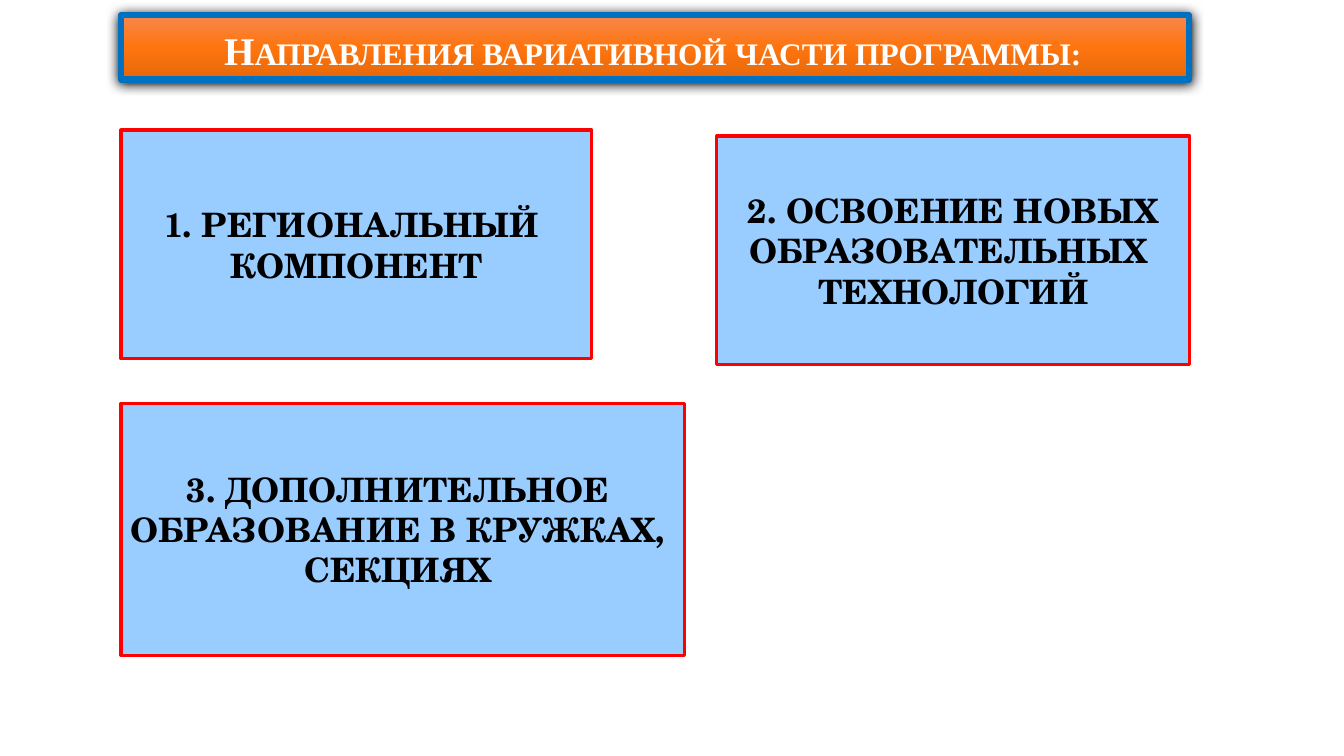
import pptx
import pptx.util
import pptx.dml.color
import pptx.enum.shapes
import pptx.enum.text
import pptx.oxml
import pptx.oxml.ns
from lxml import etree

Inches, Pt = pptx.util.Inches, pptx.util.Pt
RGB = pptx.dml.color.RGBColor.from_string
RECTANGLE = pptx.enum.shapes.MSO_SHAPE.RECTANGLE
CENTER = pptx.enum.text.PP_ALIGN.CENTER
ANCHOR = pptx.enum.text.MSO_ANCHOR
qn = pptx.oxml.ns.qn

# Content
HEADING = "Направления вариативной части программы:"
DIRECTIONS = [
    # left, top, width, height, lines
    (1.2, 1.29, 4.67, 2.27, ["1. РЕГИОНАЛЬНЫЙ ", "КОМПОНЕНТ"]),
    (7.11, 1.35, 4.69, 2.27,
     [" 2. ОСВОЕНИЕ НОВЫХ ", "ОБРАЗОВАТЕЛЬНЫХ ", "ТЕХНОЛОГИЙ"]),
    (1.2, 4, 5.59, 2.5,
     ["3. ДОПОЛНИТЕЛЬНОЕ ", "ОБРАЗОВАНИЕ В КРУЖКАХ, ", "СЕКЦИЯХ "]),
]
BANNER_BOX = (1.2, 0.15, 10.59, 0.64)
HEADING_BOX = (0.8, 0, 11.35, 0.78)

THEME = {
    "banner_stops": [(0, "F7874E"), (50, "FE750F"), (100, "E5680A")],
    "banner_line": ("0070C0", 4.5),
    "shadow": "000000",
    "card_fill": "99CCFF",
    "card_line": ("FF0000", 2.25),
    "heading": ("Times New Roman", 28, "FFFFFF"),
    "card_text": ("TeX Gyre Schola", 24, "000000"),
}


def add_rectangle(slide, box, line):
    rectangle = slide.shapes.add_shape(RECTANGLE, *map(Inches, box))
    rectangle.shadow.inherit = False
    color, width = line
    rectangle.line.color.rgb = RGB(color)
    rectangle.line.width = Pt(width)
    return rectangle


def write_lines(frame, lines, style):
    font_name, size, color = style
    for index, line in enumerate(lines):
        paragraph = frame.paragraphs[0] if index == 0 else frame.add_paragraph()
        paragraph.alignment = CENTER
        run = paragraph.add_run()
        run.text = line
        run.font.name = font_name
        run.font.size = Pt(size)
        run.font.bold = True
        run.font.color.rgb = RGB(color)


def add_color(parent, color):
    etree.SubElement(parent, qn("a:srgbClr"), val=color)


def add_banner(slide):
    banner = add_rectangle(slide, BANNER_BOX, THEME["banner_line"])
    banner.fill.gradient()
    banner.fill.gradient_angle = 270  # top to bottom
    properties = banner._element.spPr
    stops = properties.find(".//" + qn("a:gsLst"))
    for stop in list(stops):
        stops.remove(stop)
    for percent, color in THEME["banner_stops"]:
        stop = etree.SubElement(stops, qn("a:gs"), pos=str(percent * 1000))
        add_color(stop, color)
    shadow = etree.SubElement(
        properties.find(qn("a:effectLst")), qn("a:outerShdw"),
        blurRad=str(Pt(8.5)), dist=str(Pt(1)), dir=str(90 * 60000),
        rotWithShape="0")
    add_color(shadow, THEME["shadow"])


def add_heading(slide):
    frame = slide.shapes.add_textbox(*map(Inches, HEADING_BOX)).text_frame
    frame.word_wrap = True
    frame.vertical_anchor = ANCHOR.BOTTOM
    write_lines(frame, [HEADING], THEME["heading"])
    paragraph = frame.paragraphs[0]
    paragraph.line_spacing = 0.9
    paragraph.runs[0].font._element.set("cap", "small")


def add_direction(slide, box, lines):
    card = add_rectangle(slide, box, THEME["card_line"])
    card.fill.solid()
    card.fill.fore_color.rgb = RGB(THEME["card_fill"])
    card.text_frame.word_wrap = False
    card.text_frame.vertical_anchor = ANCHOR.MIDDLE
    write_lines(card.text_frame, lines, THEME["card_text"])


def main():
    deck = pptx.Presentation()
    deck.slide_width, deck.slide_height = Inches(13.33), Inches(7.5)
    slide = deck.slides.add_slide(deck.slide_layouts[6])

    # Heading banner
    add_banner(slide)
    add_heading(slide)

    # Programme directions
    for *box, lines in DIRECTIONS:
        add_direction(slide, box, lines)

    deck.save("out.pptx")


if __name__ == "__main__":
    main()
